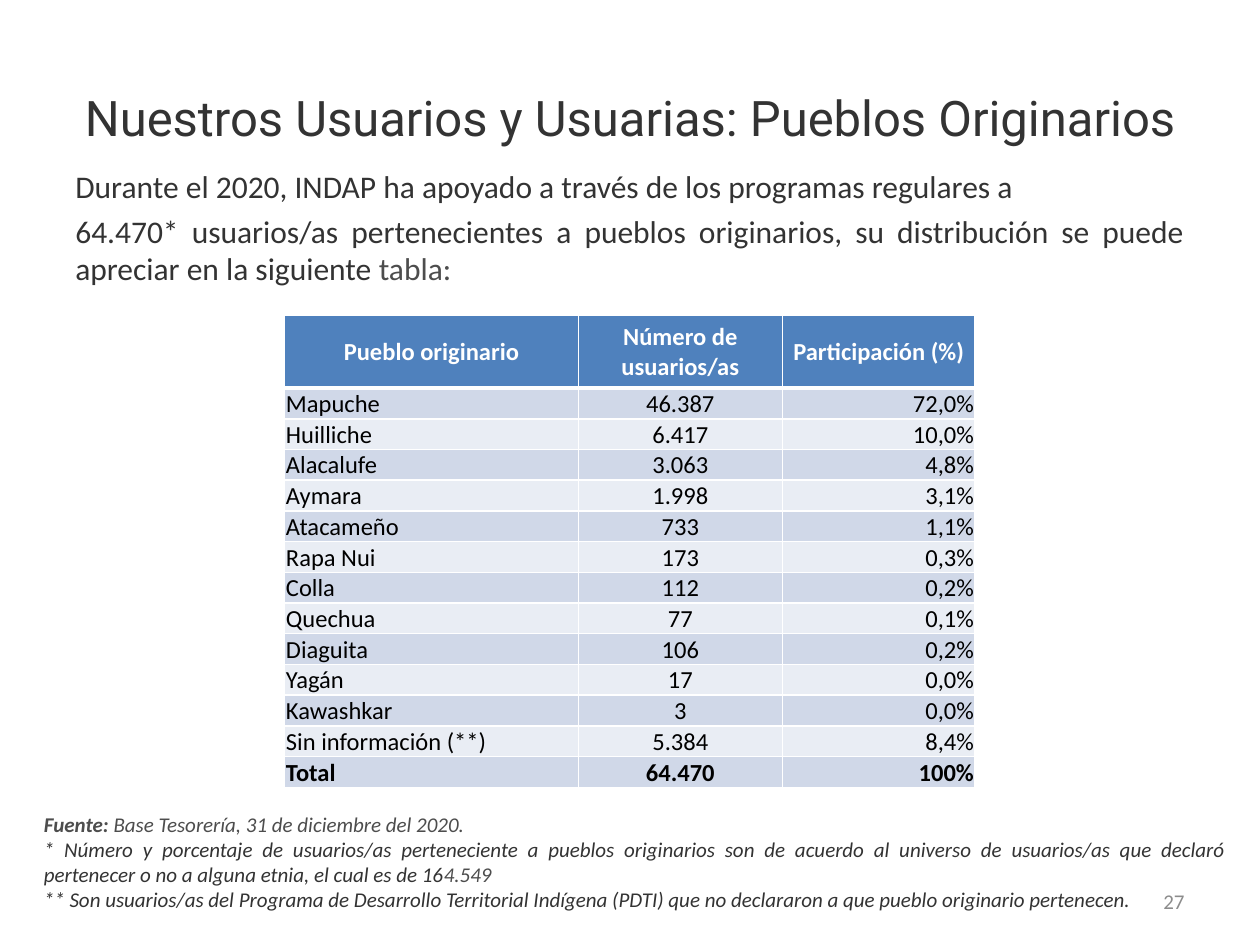
from lxml.etree import SubElement as Sub
from pptx import Presentation
from pptx.dml.color import RGBColor as RGB
from pptx.enum.text import MSO_ANCHOR as Anchor, PP_ALIGN as Align
from pptx.oxml.ns import qn
from pptx.util import Inches, Pt

DARK = RGB(0x33, 0x33, 0x33)
GREY = RGB(0x4D, 0x4D, 0x4D)
PALE = RGB(0x8C, 0x8C, 0x8C)
BLACK = RGB(0, 0, 0)
WHITE = RGB(0xFF, 0xFF, 0xFF)
BLUE = RGB(0x4F, 0x81, 0xBD)
BANDS = RGB(0xD0, 0xD8, 0xE8), RGB(0xE9, 0xED, 0xF4)

TITLE = "Nuestros Usuarios y Usuarias: Pueblos Originarios"
INTRO = [
    [("Durante el 2020, INDAP ha apoyado a través de los programas regulares a", DARK)],
    [("64.470* usuarios/as pertenecientes a pueblos originarios, "
      "su distribución se puede apreciar en la siguiente ", DARK), ("tabla:", GREY)],
]
NOTES = [
    [("Fuente: ", GREY, True), ("Base Tesorería, 31 de diciembre del 2020.", GREY)],
    [("* Número y porcentaje de usuarios/as perteneciente a pueblos originarios son de "
      "acuerdo al universo de usuarios/as que declaró pertenecer o no a alguna etnia, "
      "el cual es de 16", DARK), ("4.549", GREY)],
    [("** Son usuarios/as del Programa de Desarrollo Territorial Indígena (PDTI) "
      "que no declararon a que pueblo originario pertenecen.", DARK)],
]
ROWS = [
    ("Pueblo originario", "Número de usuarios/as", "Participación (%)"),
    ("Mapuche", "46.387", "72,0%"),
    ("Huilliche", "6.417", "10,0%"),
    ("Alacalufe", "3.063", "4,8%"),
    ("Aymara", "1.998", "3,1%"),
    ("Atacameño", "733", "1,1%"),
    ("Rapa Nui", "173", "0,3%"),
    ("Colla", "112", "0,2%"),
    ("Quechua", "77", "0,1%"),
    ("Diaguita", "106", "0,2%"),
    ("Yagán", "17", "0,0%"),
    ("Kawashkar", "3", "0,0%"),
    ("Sin información (**)", "5.384", "8,4%"),
    ("Total", "64.470", "100%"),
]
WIDTHS = 2.33, 1.62, 1.53
SIDES = Align.LEFT, Align.CENTER, Align.RIGHT
HEAD, TALL = 0.58, 3.75


def style(para, size, align, color=None, bold=None, face="Calibri"):
    para.alignment = align
    font = para.font
    font.name, font.size, font.bold = face, Pt(size), bold
    if color is not None:
        font.color.rgb = color


def add_title(slide):
    title = slide.shapes.title
    title.left, title.top, title.width, title.height = map(Inches, (0.5, 0.3, 9, 1.25))
    frame = title.text_frame
    frame.text = TITLE
    frame.vertical_anchor = Anchor.MIDDLE
    style(frame.paragraphs[0], 28, Align.CENTER, DARK, face="Roboto")


def add_text(slide, box, paras, size, align=Align.JUSTIFY, gap=0, italic=None,
             anchor=Anchor.TOP):
    frame = slide.shapes.add_textbox(*map(Inches, box)).text_frame
    frame.word_wrap = True
    frame.vertical_anchor = anchor
    for i, parts in enumerate(paras):
        para = frame.add_paragraph() if i else frame.paragraphs[0]
        style(para, size, align)
        para.font.italic = italic
        if i:
            para.space_before = Pt(gap)
        for text, color, *bold in parts:
            run = para.add_run()
            run.text = text
            run.font.color.rgb = color
            if bold:
                run.font.bold = True


def add_edges(cell, top, base):
    props = cell._tc.get_or_add_tcPr()
    for side, width in zip("LRTB", (1, 1, top, base)):
        line = Sub(props, qn(f"a:ln{side}"), w=str(Pt(width)))
        fill = Sub(line, qn("a:solidFill"))
        Sub(fill, qn("a:srgbClr"), val=str(WHITE))


def fill_cell(cell, text, row, col):
    head, last = row == 0, row == len(ROWS) - 1
    add_edges(cell, 3 if row == 1 else 1, 3 if head else 1)
    cell.fill.solid()
    cell.fill.fore_color.rgb = BLUE if head else BANDS[(row - 1) % 2]
    cell.margin_left = cell.margin_right = cell.margin_top = Inches(0.01)
    cell.margin_bottom = 0
    cell.vertical_anchor = Anchor.MIDDLE if head else Anchor.BOTTOM
    cell.text = text
    style(cell.text_frame.paragraphs[0], 14, Align.CENTER if head else SIDES[col],
          WHITE if head else BLACK, head or last)


def add_grid(slide):
    box = map(Inches, (2.26, 2.5, sum(WIDTHS), TALL))
    table = slide.shapes.add_table(len(ROWS), len(WIDTHS), *box).table
    for col, width in zip(table.columns, WIDTHS):
        col.width = Inches(width)
    for r, texts in enumerate(ROWS):
        table.rows[r].height = Inches((TALL - HEAD) / (len(ROWS) - 1) if r else HEAD)
        for c, text in enumerate(texts):
            fill_cell(table.cell(r, c), text, r, c)


def main():
    deck = Presentation()
    deck.slide_width, deck.slide_height = Inches(10), Inches(7.5)
    slide = deck.slides.add_slide(deck.slide_layouts[5])
    add_title(slide)
    add_text(slide, (0.5, 1.28, 9, 1.07), INTRO, 18, gap=3.6)
    add_text(slide, (0.25, 6.39, 9.58, 0.91), NOTES, 12, italic=True)
    add_grid(slide)
    add_text(slide, (7.17, 6.95, 2.33, 0.4), [[("27", PALE)]], 12, Align.RIGHT,
             anchor=Anchor.MIDDLE)
    deck.save("out.pptx")


if __name__ == "__main__":
    main()
